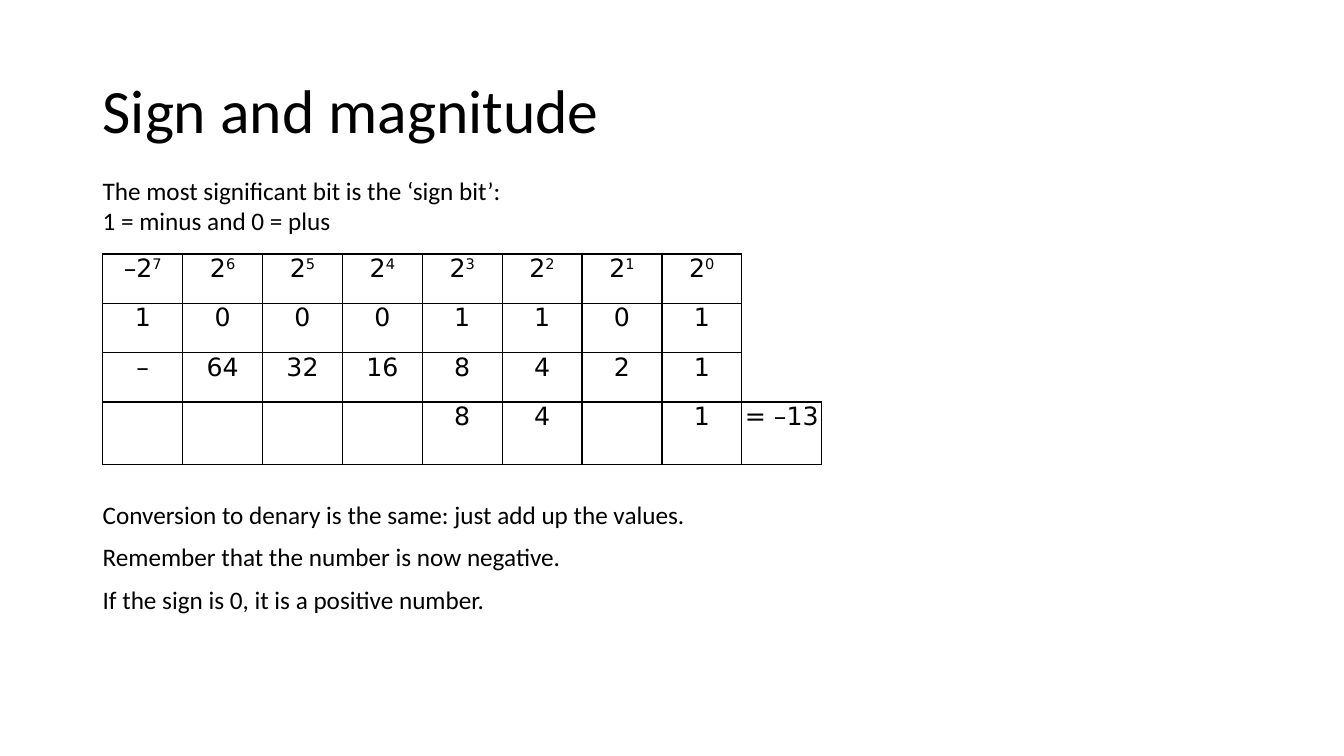
import pptx
import pptx.dml.color
import pptx.enum.text
import pptx.oxml
import pptx.oxml.ns
import pptx.util
from pptx.util import Inches

COLORS = {"ink": "000000", "paper": "FFFFFF"}
NO_STYLE = "{2D5ABB26-0587-4C30-8999-92F81FD0307C}"


def write(frame, lines, size=18, font="Calibri", align="LEFT", space_before=0, line_spacing=1.0):
    """Fill a text frame with one paragraph per line; text after ^ is superscript."""
    for index, line in enumerate(lines):
        paragraph = frame.add_paragraph() if index else frame.paragraphs[0]
        paragraph.alignment = getattr(pptx.enum.text.PP_ALIGN, align)
        paragraph.line_spacing = line_spacing
        paragraph.space_before = pptx.util.Pt(space_before if index else 0)
        for level, part in enumerate(line.split("^")):
            run = paragraph.add_run()
            run.text = part
            run.font.size = pptx.util.Pt(size)
            run.font.name = font
            run.font.color.rgb = pptx.dml.color.RGBColor.from_string(COLORS["ink"])
            if level:
                run.font._element.set("baseline", "30000")


def draw_border(cell, side, points):
    """Rule one side (L, R, T or B) of a table cell."""
    cell._tc.get_or_add_tcPr().append(pptx.oxml.parse_xml(
        f'<a:ln{side} {pptx.oxml.ns.nsdecls("a")} w="{int(pptx.util.Pt(points))}">'
        f'<a:solidFill><a:srgbClr val="{COLORS["ink"]}"/></a:solidFill></a:ln{side}>'))


presentation = pptx.Presentation()
presentation.slide_width = Inches(13.33)
presentation.slide_height = Inches(7.5)
slide = presentation.slides.add_slide(presentation.slide_layouts[6])
slide.background.fill.solid()
slide.background.fill.fore_color.rgb = pptx.dml.color.RGBColor.from_string(COLORS["paper"])

# Title, introduction and conclusions
texts = [
    (0.4, 11.5, 1.45, "MIDDLE", ["Sign and magnitude"], {"size": 44, "line_spacing": 0.9}),
    (1.69, 6.67, 0.71, "TOP",
     ["The most significant bit is the ‘sign bit’:", "1 = minus and 0 = plus"], {}),
    (4.9, 6.67, 1.31, "TOP",
     ["Conversion to denary is the same: just add up the values.",
      "Remember that the number is now negative.",
      "If the sign is 0, it is a positive number."], {"space_before": 9}),
]
for top, width, height, anchor, lines, text_format in texts:
    frame = slide.shapes.add_textbox(
        Inches(0.92), Inches(top), Inches(width), Inches(height)).text_frame
    frame.word_wrap = True
    frame.vertical_anchor = getattr(pptx.enum.text.MSO_ANCHOR, anchor)
    write(frame, lines, **text_format)

# Place values, bits and their sum
BITS = "10001101"
powers = range(len(BITS) - 1, -1, -1)
values = ["–"] + [str(2 ** power) for power in powers[1:]]
rows = [
    ["–2^7"] + [f"2^{power}" for power in powers[1:]] + [""],
    list(BITS) + [""],
    values + [""],
    [""] + [value if bit == "1" else "" for bit, value in zip(BITS[1:], values[1:])] + ["= –13"],
]
row_heights = [0.49, 0.49, 0.49, 0.62]
last_row, last_column = len(rows) - 1, len(BITS)
table = slide.shapes.add_table(
    len(rows), last_column + 1, Inches(1.02), Inches(2.52),
    Inches(7.13), Inches(sum(row_heights))).table
table.first_row = table.horz_banding = False
table._tbl.tblPr.find(pptx.oxml.ns.qn("a:tableStyleId")).text = NO_STYLE

for row, (height, entries) in enumerate(zip(row_heights, rows)):
    table.rows[row].height = Inches(height)
    for column, entry in enumerate(entries):
        cell = table.cell(row, column)
        cell.margin_left = cell.margin_right = cell.margin_top = cell.margin_bottom = 0
        write(cell.text_frame, [entry], font="DejaVu Sans", align="CENTER")
        boxed = column < last_column or row == last_row
        draw_border(cell, "L", 1)
        if boxed:
            draw_border(cell, "R", 1)
            draw_border(cell, "T", 2.25 if row == last_row else 1)
        if boxed or row == last_row - 1:
            draw_border(cell, "B", 2.25 if row == last_row - 1 else 1)
        cell.fill.background()

presentation.save("out.pptx")
